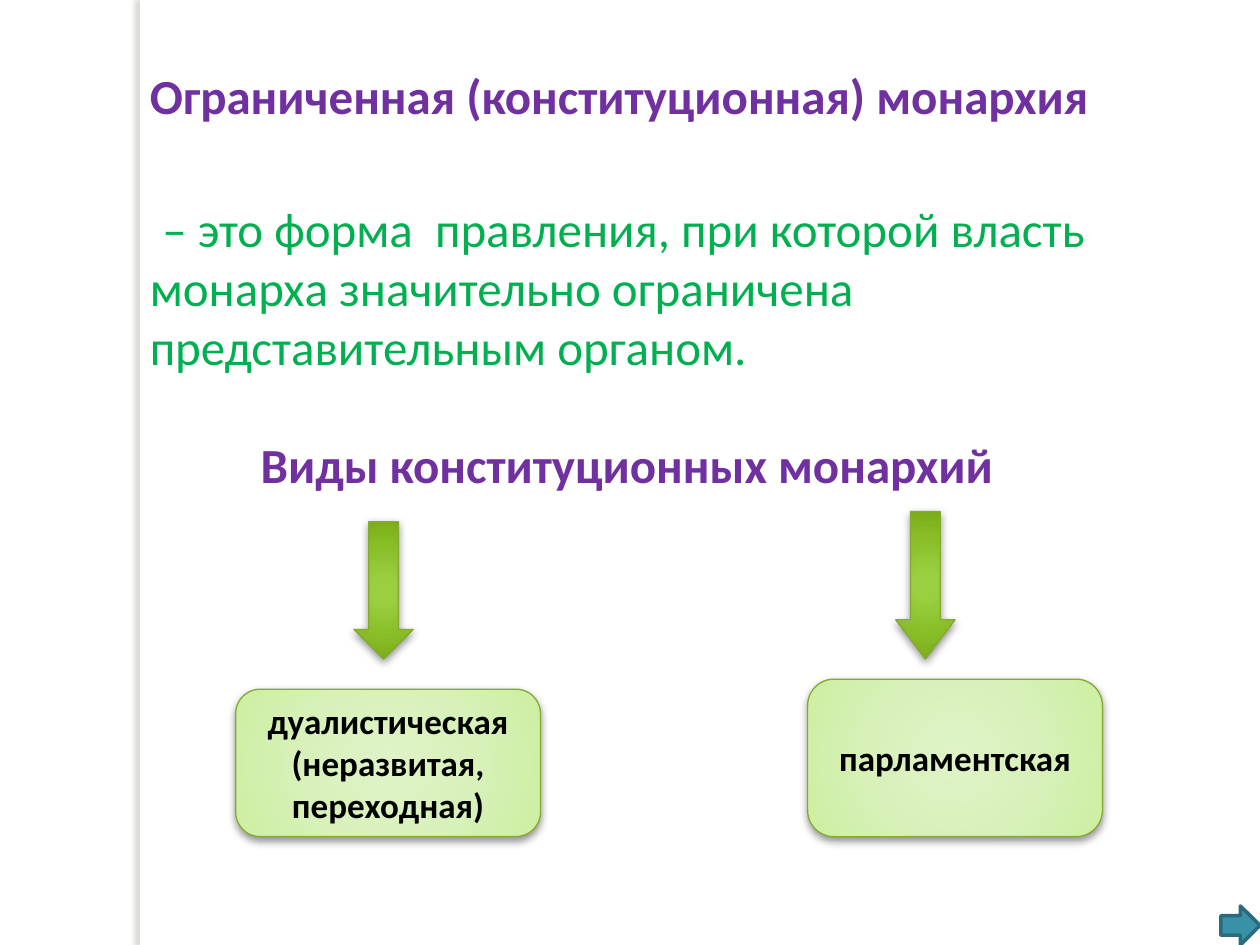
"""Build a slide on the two kinds of constitutional monarchy."""
from pptx import Presentation, util as u, oxml
from pptx.dml.color import RGBColor
from pptx.enum import shapes, text
from pptx.oxml import ns

Inches, Pt = u.Inches, u.Pt
KIND = shapes.MSO_SHAPE
ALIGN = text.PP_ALIGN
PURPLE, GREEN, BLACK = "7030A0", "00B050", "000000"
EDGE = "84AA33"
LIME = [(0, "9AD041"), (15, "9ACF41"), (62, "88BD27"), (97, "79AB17"), (100, "77AC08")]
PALE = [(0, "DFF3C7"), (50, "D8F1BA"), (97, "CDEFA2"), (100, "CAF199")]
SOFT = (BLACK, 43, 5, 2, 90)


def color(code):
    return RGBColor.from_string(code)


class Deck:
    def __init__(self, font):
        self.font = font
        self.prs = Presentation()
        self.prs.slide_width, self.prs.slide_height = Inches(10), Inches(7.5)
        self.slide = self.prs.slides.add_slide(self.prs.slide_layouts[5])

    def label(self, para, words, size, tint, bold=True, align=ALIGN.LEFT):
        para.text = words
        para.alignment = align
        font = para.font
        font.name, font.size, font.bold = self.font, Pt(size), bold
        font.color.rgb = color(tint)

    def title(self, words, box):
        item = self.slide.shapes.title
        item.left, item.top, item.width, item.height = map(Inches, box)
        frame = item.text_frame
        frame.auto_size = text.MSO_AUTO_SIZE.NONE
        frame.vertical_anchor = text.MSO_ANCHOR.TOP
        self.label(frame.paragraphs[0], words, 28, PURPLE)

    def body(self, box, rows):
        frame = self.slide.shapes.add_textbox(*map(Inches, box)).text_frame
        frame.word_wrap = True
        for i, (words, tint, bold, indent, gap) in enumerate(rows):
            para = frame.add_paragraph() if i else frame.paragraphs[0]
            para._p.get_or_add_pPr().set("indent", str(Inches(indent)))
            if gap:
                para.space_before = Pt(gap)
            self.label(para, words, 28, tint, bold)

    def shape(self, kind, box, fill, edge=None, width=0.75, shade=None):
        item = self.slide.shapes.add_shape(kind, *map(Inches, box))
        item.shadow.inherit = False
        if isinstance(fill, str):
            item.fill.solid()
            item.fill.fore_color.rgb = color(fill)
        else:
            self.glow(item, fill)
        if edge:
            item.line.color.rgb = color(edge)
            item.line.width = Pt(width)
        else:
            item.line.fill.background()
        if shade:
            self.shade(item, *shade)
        return item

    def glow(self, item, stops):
        marks = "".join(
            f'<a:gs pos="{pos * 1000}"><a:srgbClr val="{tint}"/></a:gs>' for pos, tint in stops)
        item._element.spPr.find(ns.qn("a:prstGeom")).addnext(oxml.parse_xml(
            f'<a:gradFill {ns.nsdecls("a")} rotWithShape="1"><a:gsLst>{marks}</a:gsLst>'
            '<a:path path="circle"><a:fillToRect l="50000" t="50000" r="50000" b="50000"/>'
            '</a:path></a:gradFill>'))

    def shade(self, item, tint, alpha, blur, dist, turn):
        item._element.spPr.find(ns.qn("a:effectLst")).append(oxml.parse_xml(
            f'<a:outerShdw {ns.nsdecls("a")} blurRad="{Pt(blur)}" dist="{Pt(dist)}" '
            f'dir="{turn * 60000}" rotWithShape="0"><a:srgbClr val="{tint}">'
            f'<a:alpha val="{alpha * 1000}"/></a:srgbClr></a:outerShdw>'))

    def arrow(self, box, head):
        item = self.shape(KIND.DOWN_ARROW, box, LIME, EDGE, shade=SOFT)
        item.adjustments[1] = head

    def card(self, words, box):
        item = self.shape(KIND.ROUNDED_RECTANGLE, box, PALE, EDGE, shade=SOFT)
        frame = item.text_frame
        frame.word_wrap = True
        frame.vertical_anchor = text.MSO_ANCHOR.MIDDLE
        self.label(frame.paragraphs[0], words, 20, BLACK, align=ALIGN.CENTER)


def main():
    deck = Deck("Calibri")
    deck.shape(KIND.RECTANGLE, (1.11, 0, 0.08, 7.5), "FFFFFF", shade=("736F63", 25, 3, 3, 180))
    deck.title("Ограниченная (конституционная) монархия", (1.09, 0.47, 8.75, 0.6))
    deck.body((1.09, 1.53, 8.75, 2.5), [
        ("– это форма  правления, при которой власть монарха значительно ограничена "
         "представительным органом.", GREEN, False, 0.1, 0),
        ("Виды конституционных монархий", PURPLE, True, 0.88, 34),
    ])
    kinds = [
        ("дуалистическая (неразвитая, переходная)", (1.87, 5.47, 2.42, 1.17),
         (2.81, 4.14, 0.47, 1.09), 0.5),
        ("парламентская", (6.41, 5.39, 2.34, 1.25), (7.11, 4.06, 0.47, 1.17), 0.66),
    ]
    for words, box, stem, head in kinds:
        deck.arrow(stem, head)
        deck.card(words, box)
    deck.shape(KIND.RIGHT_ARROW, (9.69, 7.19, 0.31, 0.31), "3891A7", "296B7C", 2)
    deck.prs.save("out.pptx")


if __name__ == "__main__":
    main()
